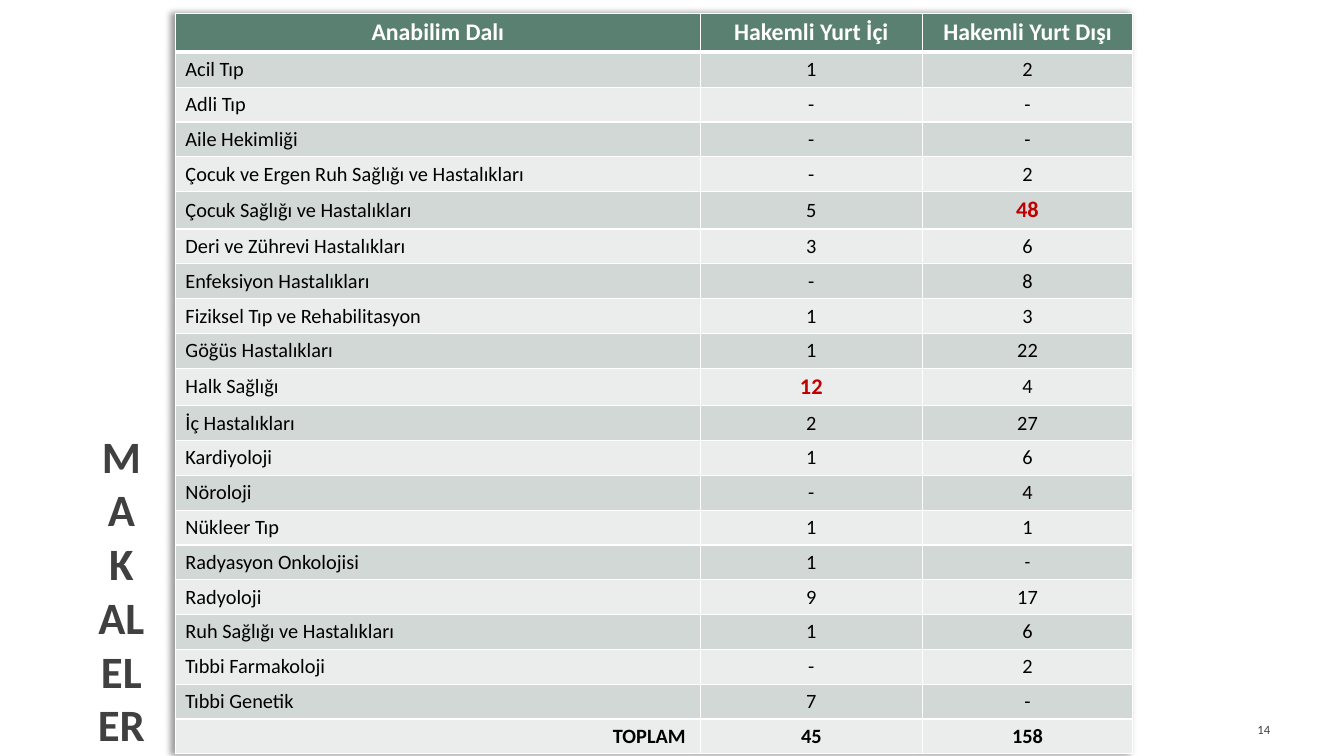
import pptx
import pptx.util
import pptx.dml.color
import pptx.enum.text
import pptx.oxml
import pptx.oxml.ns

Cm = pptx.util.Cm
Pt = pptx.util.Pt
ALIGN = pptx.enum.text.PP_ALIGN
ANCHOR = pptx.enum.text.MSO_ANCHOR

HEAD = ("Anabilim Dalı", "Hakemli Yurt İçi", "Hakemli Yurt Dışı")
ROWS = (
    ("Acil Tıp", "1", "2"),
    ("Adli Tıp", "-", "-"),
    ("Aile Hekimliği", "-", "-"),
    ("Çocuk ve Ergen Ruh Sağlığı ve Hastalıkları", "-", "2"),
    ("Çocuk Sağlığı ve Hastalıkları", "5", "48"),
    ("Deri ve Zührevi Hastalıkları", "3", "6"),
    ("Enfeksiyon Hastalıkları", "-", "8"),
    ("Fiziksel Tıp ve Rehabilitasyon", "1", "3"),
    ("Göğüs Hastalıkları", "1", "22"),
    ("Halk Sağlığı", "12", "4"),
    ("İç Hastalıkları", "2", "27"),
    ("Kardiyoloji", "1", "6"),
    ("Nöroloji", "-", "4"),
    ("Nükleer Tıp", "1", "1"),
    ("Radyasyon Onkolojisi", "1", "-"),
    ("Radyoloji", "9", "17"),
    ("Ruh Sağlığı ve Hastalıkları", "1", "6"),
    ("Tıbbi Farmakoloji", "-", "2"),
    ("Tıbbi Genetik", "7", "-"),
)
TOTAL = ("TOPLAM ", "45", "158")
PEAKS = ("12", "48")
WIDTHS = (13.23, 5.59, 5.31)


def color(code):
    """Turn a hex string into a colour."""
    return pptx.dml.color.RGBColor.from_string(code)


def write(frame, text, size, code, bold=False, align=ALIGN.CENTER):
    """Write one run into the first paragraph of a frame."""
    para = frame.paragraphs[0]
    para.alignment = align
    run = para.add_run()
    run.text = text
    font = run.font
    font.name = "Calibri"
    font.size = Pt(size)
    font.bold = bold
    font.color.rgb = color(code)


def edge(cell, top, base):
    """Draw white borders around a cell, with top and base widths in points."""
    props = cell._tc.get_or_add_tcPr()
    for side, width in (("L", 1), ("R", 1), ("T", top), ("B", base)):
        props.append(pptx.oxml.parse_xml(
            f'<a:ln{side} {pptx.oxml.ns.nsdecls("a")} w="{Pt(width)}">'
            '<a:solidFill><a:srgbClr val="FFFFFF"/></a:solidFill>'
            f'</a:ln{side}>'))


def shade(table):
    """Cast a soft shadow to the left of the table."""
    table._tbl.tblPr.insert(0, pptx.oxml.parse_xml(
        f'<a:effectLst {pptx.oxml.ns.nsdecls("a")}>'
        '<a:outerShdw blurRad="50800" dist="38100" dir="10800000">'
        '<a:srgbClr val="000000"><a:alpha val="40000"/></a:srgbClr>'
        '</a:outerShdw></a:effectLst>'))


def style(row, col, text):
    """Give the size, colour, weight and alignment of a cell's text."""
    if row == 0:
        return 17, "FFFFFF", True, ALIGN.CENTER
    total = row > len(ROWS)
    if col == 0:
        return 14.5, "000000", total, ALIGN.RIGHT if total else ALIGN.LEFT
    if text in PEAKS:
        return 16, "C00000", True, ALIGN.CENTER
    small = ROWS[row - 1][0] == "Radyasyon Onkolojisi" if not total else False
    size = 13.5 if small and text == "-" else 14.5
    return size, "000000", total, ALIGN.CENTER


def add_grid(slide):
    """Add the table of article counts."""
    lines = (HEAD, *ROWS, TOTAL)
    frame = slide.shapes.add_table(len(lines), len(HEAD), Cm(4.42), Cm(0.33),
                                   Cm(sum(WIDTHS)), Cm(0.79 * len(lines)))
    table = frame.table
    shade(table)
    for col, width in zip(table.columns, WIDTHS):
        col.width = Cm(width)
    for r, line in enumerate(lines):
        table.rows[r].height = Cm(0.79)
        band = "5A8071" if r == 0 else ("EAEDEB", "D2D8D5")[r % 2]
        for c, text in enumerate(line):
            cell = table.cell(r, c)
            cell.vertical_anchor = ANCHOR.MIDDLE
            edge(cell, 3 if r == 1 else 1, 3 if r == 0 else 1)
            cell.fill.solid()
            cell.fill.fore_color.rgb = color(band)
            write(cell.text_frame, text, *style(r, c, text))


def set_title(slide):
    """Place the title as a narrow column at the left."""
    title = slide.shapes.title
    title.left, title.top = Cm(2.31), Cm(0)
    title.width, title.height = Cm(1.5), Cm(19.05)
    frame = title.text_frame
    frame.auto_size = pptx.enum.text.MSO_AUTO_SIZE.NONE
    frame.word_wrap = True
    frame.vertical_anchor = ANCHOR.BOTTOM
    frame.margin_left = frame.margin_right = Cm(0.13)
    write(frame, "MAKALELER", 32, "404040", True)


def add_page(slide):
    """Add the page number."""
    box = slide.shapes.add_textbox(Cm(29.34), Cm(17.86), Cm(2.92), Cm(1.02))
    frame = box.text_frame
    frame.word_wrap = True
    frame.vertical_anchor = ANCHOR.MIDDLE
    write(frame, "14", 9, "404040", align=ALIGN.RIGHT)


def main():
    """Build the slide and save it."""
    deck = pptx.Presentation()
    deck.slide_width, deck.slide_height = Cm(33.87), Cm(19.05)
    slide = deck.slides.add_slide(deck.slide_layouts[5])
    add_grid(slide)
    set_title(slide)
    add_page(slide)
    deck.save("out.pptx")


if __name__ == "__main__":
    main()
